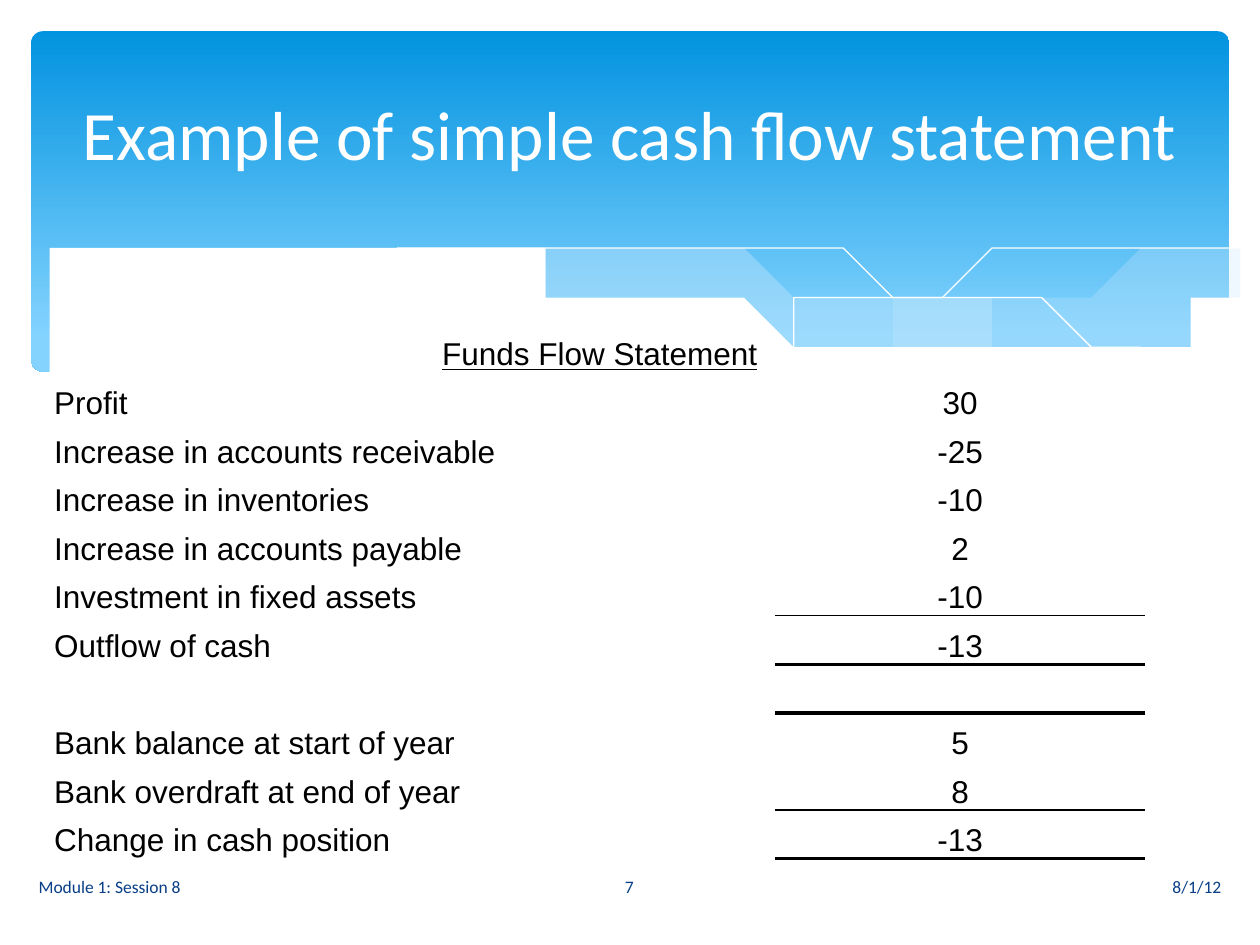
"""Build a slide with a wave banner and a simple cash flow statement."""
from dataclasses import dataclass
from typing import Optional

from lxml import etree
from pptx import Presentation
from pptx.dml.color import RGBColor
from pptx.enum.shapes import MSO_SHAPE
from pptx.enum.text import MSO_ANCHOR, MSO_AUTO_SIZE, PP_ALIGN
from pptx.oxml.ns import qn
from pptx.util import Cm, Pt

LEFT, CENTER, RIGHT = PP_ALIGN.LEFT, PP_ALIGN.CENTER, PP_ALIGN.RIGHT
MIDDLE, BOTTOM = MSO_ANCHOR.MIDDLE, MSO_ANCHOR.BOTTOM
NO_AUTOFIT = MSO_AUTO_SIZE.NONE
ROUNDED_RECTANGLE = MSO_SHAPE.ROUNDED_RECTANGLE

WHITE = RGBColor(0xFF, 0xFF, 0xFF)
BLACK = RGBColor(0x00, 0x00, 0x00)
BANNER_TOP = RGBColor(0x02, 0x93, 0xE0)
BANNER_BOTTOM = RGBColor(0x83, 0xD3, 0xFE)
WAVE_BLUE = RGBColor(0xC6, 0xE7, 0xFC)
FOOTER_BLUE = RGBColor(0x07, 0x3E, 0x87)

TITLE_ONLY = 5
CURVE_STEPS = 4
PLAIN_TABLE_STYLE = "{2D5ABB26-0587-4C30-8999-92F81FD0307C}"
THIN, THICK = 1, 2.25
COLUMN_WIDTHS = (13.23, 1.3, 7.47)
ROW_HEIGHT = 0.98

Point = tuple[float, float]


@dataclass
class Wave:
    curves: list[list[Point]]
    fill: Optional[RGBColor] = None
    opacity: int = 100


@dataclass
class Footer:
    text: str
    left: float
    width: float
    alignment: PP_ALIGN


@dataclass
class Entry:
    label: str = ""
    amount: str = ""
    rule: float = 0
    span: int = 1


WAVES = [
    Wave([[(24.79, 5.08), (23.72, 5.26), (22.63, 5.49), (21.87, 5.66), (20.45, 6.02),
           (19.13, 6.3), (17.93, 6.53), (16.79, 6.73)],
          [(16.79, 6.73), (18.26, 6.91), (19.53, 7.01), (20.68, 7.06), (21.69, 7.01),
           (22.58, 6.91), (23.39, 6.73), (24.1, 6.53), (24.79, 6.27)]], WAVE_BLUE, 29),
    Wave([[(22.68, 6.93), (21.26, 6.73), (19.69, 6.45), (17.93, 6.1), (15.98, 5.64),
           (14.83, 5.36), (13.74, 5.15), (12.75, 4.98), (11.81, 4.85), (10.67, 4.75),
           (9.65, 4.7), (8.74, 4.72), (7.95, 4.78), (7.26, 4.85)],
          [(7.26, 4.85), (8.69, 5.05), (10.26, 5.36), (11.4, 5.64), (13.46, 6.1),
           (15.27, 6.48), (16.89, 6.76), (18.34, 6.95), (19.63, 7.04), (20.78, 7.06),
           (21.78, 7.04), (22.68, 6.93)]], WAVE_BLUE, 40),
    Wave([[(7.85, 4.95), (8.33, 4.88), (9.22, 4.8), (10.19, 4.75), (11.43, 4.78),
           (12.95, 4.88), (14.78, 5.08), (16.15, 5.28), (17.65, 5.56), (19.3, 5.92),
           (21.11, 6.38), (23.04, 6.91)]]),
    Wave([[(15.57, 6.53), (17.07, 6.12), (19, 5.66), (20.47, 5.33), (22, 5.05),
           (23.11, 4.88), (24.16, 4.75), (24.77, 4.7)]]),
    Wave([[(24.82, 6.25), (24.13, 6.5), (23.37, 6.73), (22.53, 6.89), (21.59, 6.99),
           (20.55, 7.04), (19.35, 6.99), (17.98, 6.86), (16.46, 6.65), (14.71, 6.35),
           (12.78, 5.92), (11.35, 5.59), (9.93, 5.26), (8.64, 5), (7.42, 4.83),
           (6.35, 4.72), (5.36, 4.67), (4.5, 4.67), (3.71, 4.7), (3.02, 4.75),
           (2.41, 4.85), (1.93, 4.95), (1.5, 5.05), (1.17, 5.16), (0.91, 5.26),
           (0.58, 5.41)],
          [(0.58, 8.36), (24.82, 8.36)]], WHITE),
]
FOOTERS = [
    Footer("8/1/12", 14.35, 10.52, RIGHT),
    Footer("Module 1: Session 8", 0.53, 10.52, LEFT),
    Footer("7", 11.07, 3.23, CENTER),
]
ENTRIES = [
    Entry("Funds Flow Statement", span=3),
    Entry("Profit", "30"),
    Entry("Increase in accounts receivable", "-25", span=2),
    Entry("Increase in inventories", "-10"),
    Entry("Increase in accounts payable", "2"),
    Entry("Investment in fixed assets", "-10", THIN),
    Entry("Outflow of cash", "-13", THICK),
    Entry(),
    Entry("Bank balance at start of year", "5"),
    Entry("Bank overdraft at end of year", "8", THIN, 2),
    Entry("Change in cash position", "-13", THICK),
]


def smooth(points: list[Point]) -> list[Point]:
    padded = [points[0], *points, points[-1]]
    result = [points[0]]
    for a, b, c, d in zip(padded, padded[1:], padded[2:], padded[3:]):
        for step in range(1, CURVE_STEPS + 1):
            t = step / CURVE_STEPS
            result.append(tuple(
                0.5 * (2 * q + (r - p) * t + (2 * p - 5 * q + 4 * r - s) * t ** 2
                       + (3 * q - p - 3 * r + s) * t ** 3)
                for p, q, r, s in zip(a, b, c, d)))
    return result


def add_text(paragraph, text: str, font_name: str, size: float, color: RGBColor,
             alignment: PP_ALIGN, underline: bool = False) -> None:
    paragraph.alignment = alignment
    run = paragraph.add_run()
    run.text = text
    run.font.name, run.font.size = font_name, Pt(size)
    run.font.color.rgb = color
    run.font.underline = underline


def add_banner(slide) -> None:
    shape = slide.shapes.add_shape(ROUNDED_RECTANGLE, Cm(0.63), Cm(0.63), Cm(24.15), Cm(6.86))
    shape.adjustments[0] = 0.034
    shape.shadow.inherit = False
    shape.line.fill.background()
    shape.fill.gradient()
    shape.fill.gradient_angle = 270
    first, last = shape.fill.gradient_stops
    first.color.rgb, last.color.rgb = BANNER_TOP, BANNER_BOTTOM
    first.position, last.position = 0, 0.9


def add_wave(slide, wave: Wave) -> None:
    points = [point for curve in wave.curves for point in smooth(curve)]
    builder = slide.shapes.build_freeform(*points[0], scale=Cm(1))
    builder.add_line_segments(points[1:], close=wave.fill is not None)
    shape = builder.convert_to_shape()
    shape.shadow.inherit = False
    if wave.fill is None:
        shape.fill.background()
        shape.line.color.rgb = WHITE
        shape.line.width = Pt(0)
        return
    shape.line.fill.background()
    shape.fill.solid()
    shape.fill.fore_color.rgb = wave.fill
    if wave.opacity < 100:
        color = next(shape.element.spPr.iter(qn("a:srgbClr")))
        etree.SubElement(color, qn("a:alpha"), val=str(wave.opacity * 1000))


def place_title(slide) -> None:
    title = slide.shapes.title
    title.left, title.top, title.width, title.height = Cm(1.27), Cm(0.94), Cm(22.86), Cm(3.48)
    title.element.getparent().append(title.element)
    frame = title.text_frame
    frame.word_wrap, frame.auto_size, frame.vertical_anchor = True, NO_AUTOFIT, MIDDLE
    add_text(frame.paragraphs[0], "Example of simple cash flow statement",
             "Calibri", 39.6, WHITE, CENTER)


def add_footer(slide, footer: Footer) -> None:
    box = slide.shapes.add_textbox(Cm(footer.left), Cm(17.37), Cm(footer.width), Cm(1.02))
    frame = box.text_frame
    frame.word_wrap, frame.vertical_anchor = True, MIDDLE
    add_text(frame.paragraphs[0], footer.text, "Calibri", 10, FOOTER_BLUE, footer.alignment)


def add_border(cell, side: str, width: float) -> None:
    line = etree.Element(qn(f"a:{side}"), w=str(Pt(width)))
    fill = etree.SubElement(line, qn("a:solidFill"))
    etree.SubElement(fill, qn("a:srgbClr"), val=str(BLACK))
    cell._tc.get_or_add_tcPr().insert(0, line)


def fill_cell(cell, text: str, alignment: PP_ALIGN, underline: bool = False) -> None:
    paragraph = cell.text_frame.paragraphs[0]
    paragraph.line_spacing, paragraph.space_after = 1.15, Pt(10)
    add_text(paragraph, text, "Arial", 18, BLACK, alignment, underline)


def add_statement(slide) -> None:
    frame = slide.shapes.add_table(len(ENTRIES), len(COLUMN_WIDTHS), Cm(1.09), Cm(6.53),
                                   Cm(sum(COLUMN_WIDTHS)), Cm(ROW_HEIGHT * len(ENTRIES)))
    next(frame.element.iter(qn("a:tableStyleId"))).text = PLAIN_TABLE_STYLE
    table = frame.table
    table.first_row = table.horz_banding = False
    for column, width in zip(table.columns, COLUMN_WIDTHS):
        column.width = Cm(width)
    for cell in table.iter_cells():
        cell.fill.background()
        cell.vertical_anchor = BOTTOM
        cell.margin_left = cell.margin_right = cell.margin_top = cell.margin_bottom = Cm(0)
    for index, entry in enumerate(ENTRIES):
        table.rows[index].height = Cm(ROW_HEIGHT)
        label, amount = table.cell(index, 0), table.cell(index, 2)
        if entry.span > 1:
            label.merge(table.cell(index, entry.span - 1))
        if entry.label:
            heading = entry.span == 3
            fill_cell(label, entry.label, CENTER if heading else LEFT, heading)
        if entry.amount:
            fill_cell(amount, entry.amount, CENTER)
        if entry.rule:
            add_border(amount, "lnB", entry.rule)
        if index and ENTRIES[index - 1].rule:
            add_border(amount, "lnT", ENTRIES[index - 1].rule)


def main() -> None:
    presentation = Presentation()
    presentation.slide_width, presentation.slide_height = Cm(25.4), Cm(19.05)
    slide = presentation.slides.add_slide(presentation.slide_layouts[TITLE_ONLY])
    add_banner(slide)
    for wave in WAVES:
        add_wave(slide, wave)
    place_title(slide)
    for footer in FOOTERS:
        add_footer(slide, footer)
    add_statement(slide)
    presentation.save("out.pptx")


if __name__ == "__main__":
    main()
